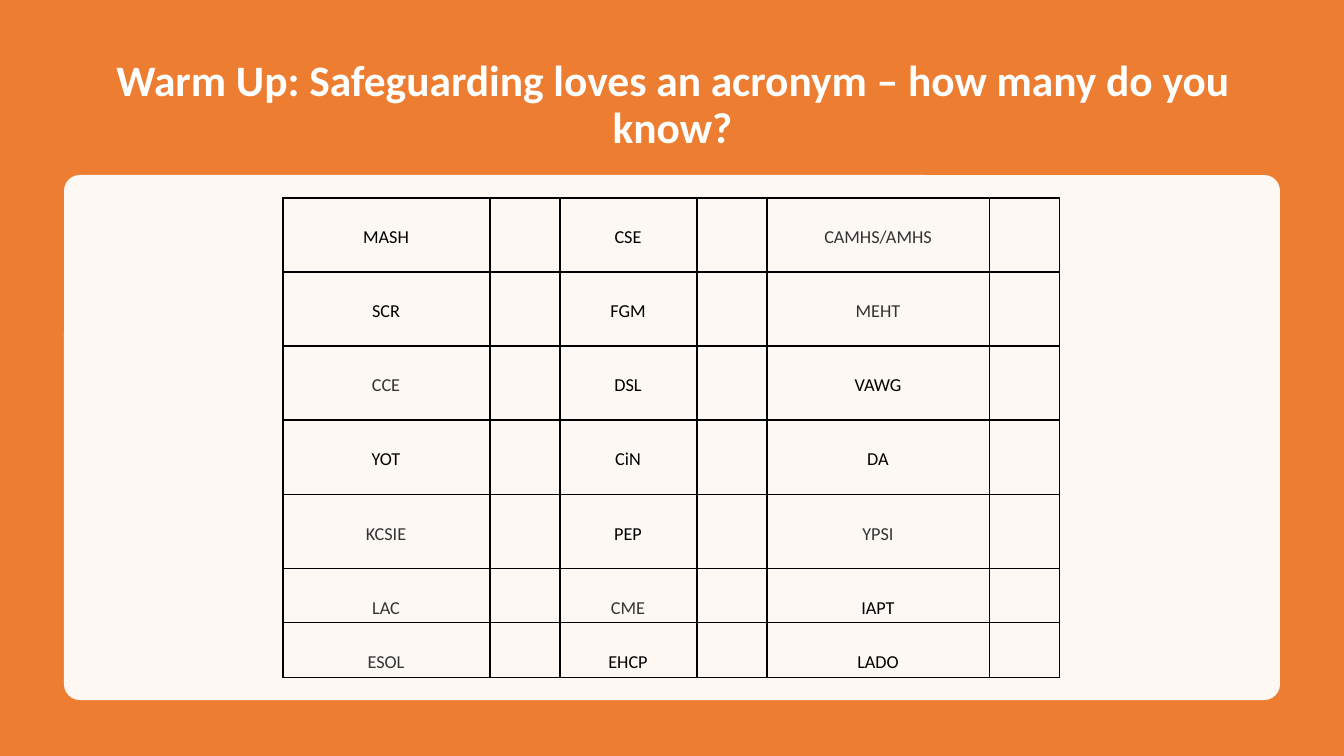
from lxml import etree
from pptx import Presentation
from pptx.dml.color import RGBColor
from pptx.enum import shapes, text
from pptx.oxml.ns import qn
from pptx.util import Emu, Pt

# Content
TITLE = "Warm Up: Safeguarding loves an acronym – how many do you know?"
ACRONYMS = [
    ("MASH", "CSE", "CAMHS/AMHS"),
    ("SCR", "FGM", "MEHT"),
    ("CCE", "DSL", "VAWG"),
    ("YOT", "CiN", "DA"),
    ("KCSIE", "PEP", "YPSI"),
    ("LAC", "CME", "IAPT"),
    ("ESOL", "EHCP", "LADO"),
]
GREY_ACRONYMS = {"CAMHS/AMHS", "MEHT", "CCE", "KCSIE", "YPSI", "LAC", "CME", "ESOL"}

# Layout in px
PAGE_SIZE = (1344, 756)
TITLE_BOX = (93, 50, 1159, 111)
PANEL_BOX = (64, 175, 1216, 525)
TABLE_CORNER = (283, 198)
COLUMN_WIDTHS = (207, 70, 137, 70, 223, 70)
ROW_HEIGHTS = (74, 74, 74, 75, 74, 54, 55)
CELL_MARGINS = {"left": 7, "top": 27, "right": 8, "bottom": 0}

FONT = "Calibri"
ORANGE = RGBColor(0xED, 0x7D, 0x31)
WHITE = RGBColor(0xFF, 0xFF, 0xFF)
BLACK = RGBColor(0x00, 0x00, 0x00)
GREY = RGBColor(0x33, 0x33, 0x33)


def px(length):
    return Emu(round(length * 914400 / 100.8))


def scaled(lengths):
    return [px(length) for length in lengths]


def add_block(page, kind, box, color):
    block = page.shapes.add_shape(kind, *scaled(box))
    block.shadow.inherit = False
    block.fill.solid()
    block.fill.fore_color.rgb = color
    block.line.fill.background()
    return block


def write(frame, words, size, color, spacing, bold=False):
    frame.vertical_anchor = frame.vertical_anchor
    para = frame.paragraphs[0]
    para.text = words
    para.alignment = text.PP_ALIGN.CENTER
    para.line_spacing = spacing
    para.font.name = FONT
    para.font.size = Pt(size)
    para.font.bold = bold
    para.font.color.rgb = color


def outline(cell):
    properties = cell._tc.get_or_add_tcPr()
    for side in ("lnL", "lnR", "lnT", "lnB"):
        line = etree.SubElement(properties, qn(f"a:{side}"), w=str(Pt(1)))
        fill = etree.SubElement(line, qn("a:solidFill"))
        etree.SubElement(fill, qn("a:srgbClr"), val=str(BLACK))


deck = Presentation()
deck.slide_width, deck.slide_height = scaled(PAGE_SIZE)
page = deck.slides.add_slide(deck.slide_layouts[6])

# Orange backdrop
add_block(page, shapes.MSO_SHAPE.RECTANGLE, (0, 0, *PAGE_SIZE), ORANGE)

# Title
title = page.shapes.add_textbox(*scaled(TITLE_BOX)).text_frame
title.word_wrap = True
title.vertical_anchor = text.MSO_ANCHOR.MIDDLE
write(title, TITLE, 31, WHITE, 0.9, bold=True)

# Translucent panel
panel = add_block(page, shapes.MSO_SHAPE.ROUNDED_RECTANGLE, PANEL_BOX, WHITE)
panel.adjustments[0] = 0.03
panel_color = panel._element.spPr.find(qn("a:solidFill")).find(qn("a:srgbClr"))
etree.SubElement(panel_color, qn("a:alpha"), val="95000")

# Acronym table: each acronym is followed by an empty answer cell
table = page.shapes.add_table(
    len(ROW_HEIGHTS), len(COLUMN_WIDTHS),
    *scaled((*TABLE_CORNER, sum(COLUMN_WIDTHS), sum(ROW_HEIGHTS))),
).table
table.first_row = table.horz_banding = False
for column, width in zip(table.columns, COLUMN_WIDTHS):
    column.width = px(width)
for row, height in zip(table.rows, ROW_HEIGHTS):
    row.height = px(height)
for cell in table.iter_cells():
    outline(cell)
    cell.fill.background()
for row, acronyms in enumerate(ACRONYMS):
    for pair, acronym in enumerate(acronyms):
        cell = table.cell(row, 2 * pair)
        for side, margin in CELL_MARGINS.items():
            setattr(cell, f"margin_{side}", px(margin))
        color = GREY if acronym in GREY_ACRONYMS else BLACK
        write(cell.text_frame, acronym, 13, color, 1.07)

deck.save("out.pptx")
